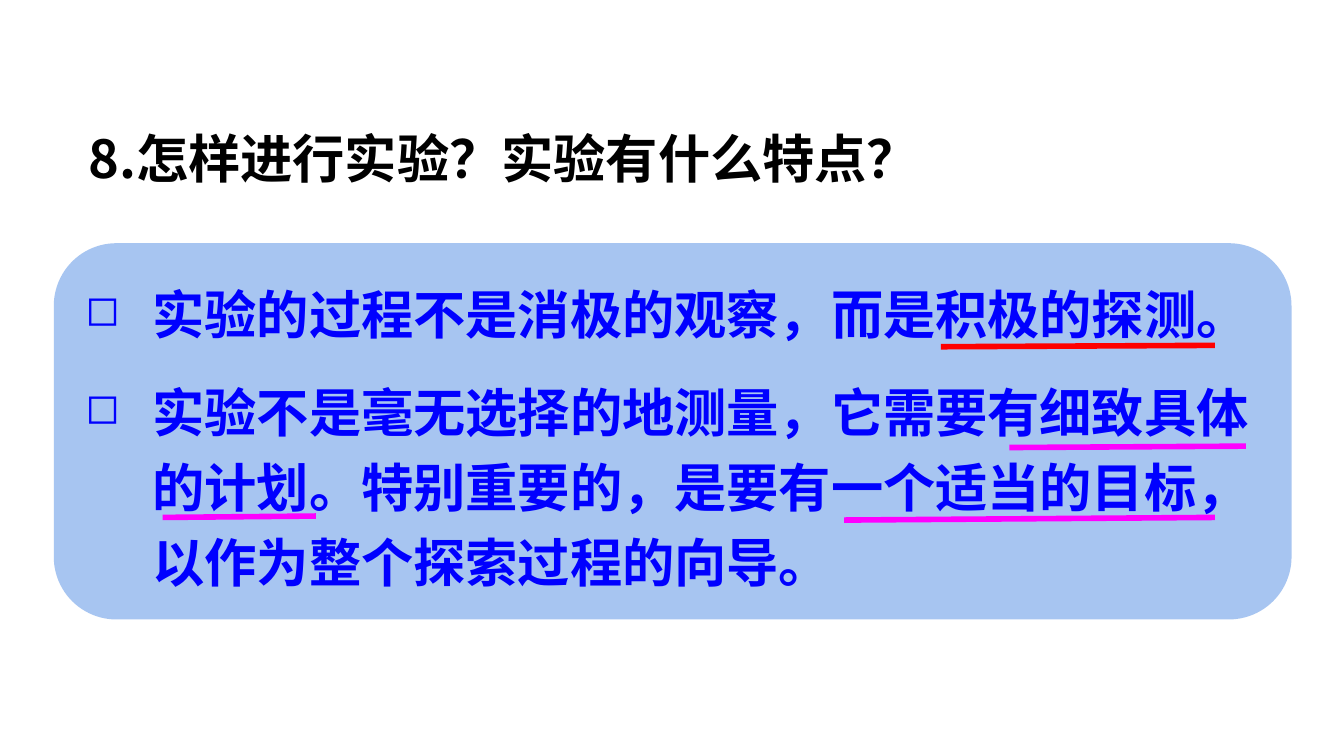
from dataclasses import dataclass

from lxml.etree import SubElement
from pptx import Presentation
from pptx.dml.color import RGBColor
from pptx.enum.shapes import MSO_CONNECTOR, MSO_SHAPE
from pptx.enum.text import MSO_ANCHOR, MSO_AUTO_SIZE, PP_ALIGN
from pptx.oxml.ns import qn
from pptx.util import Inches, Pt

SLIDE_WIDTH = 10
SLIDE_HEIGHT = SLIDE_WIDTH * 9 / 16
FONT = "Noto Sans CJK SC"
OPACITY = 55
BULLET = "◻"
BULLET_SIZE = 80
PARAGRAPH_FORMAT = {"alignment": PP_ALIGN.LEFT, "line_spacing": 1.2, "space_before": Pt(12)}
FONT_FORMAT = {"name": FONT, "size": Pt(28), "bold": True}
FRAME_FORMAT = {
    "word_wrap": True,
    "auto_size": MSO_AUTO_SIZE.NONE,
    "vertical_anchor": MSO_ANCHOR.MIDDLE,
}


@dataclass
class Panel:
    preset: MSO_SHAPE
    left: float
    top: float
    width: float
    height: float
    fill: str
    text_color: str
    paragraphs: list[str]
    bulleted: bool = False


@dataclass
class Underline:
    start: tuple[float, float]
    end: tuple[float, float]
    color: str = "FF00FF"


PANELS = [
    Panel(MSO_SHAPE.RECTANGLE, 0.56, 0.8, 6.54, 0.66, "FFFFFF", "000000",
          ["8.怎样进行实验？实验有什么特点？"]),
    Panel(MSO_SHAPE.ROUNDED_RECTANGLE, 0.4, 1.81, 9.21, 2.8, "6096E6", "0000FF",
          ["实验的过程不是消极的观察，而是积极的探测。",
           "实验不是毫无选择的地测量，它需要有细致具体的计划。"
           "特别重要的，是要有一个适当的目标，以作为整个探索过程的向导。"],
          bulleted=True),
]

UNDERLINES = [
    Underline((7, 2.58), (9.04, 2.57), "FF0000"),
    Underline((7.51, 3.33), (9.27, 3.32)),
    Underline((1.21, 3.85), (2.35, 3.84)),
    Underline((6.28, 3.87), (9.04, 3.85)),
]


def set_color(color_format, value: str) -> None:
    color_format.rgb = RGBColor.from_string(value)


def apply_format(target, values: dict) -> None:
    for name, value in values.items():
        setattr(target, name, value)


def add_bullet(paragraph) -> None:
    properties = paragraph._p.get_or_add_pPr()
    properties.set("marL", str(Inches(0.5)))
    properties.set("indent", str(Inches(-0.5)))
    SubElement(properties, qn("a:buSzPct")).set("val", str(BULLET_SIZE * 1000))
    SubElement(properties, qn("a:buChar")).set("char", BULLET)


def write_paragraph(paragraph, text: str, color: str, bulleted: bool) -> None:
    apply_format(paragraph, PARAGRAPH_FORMAT)
    if bulleted:
        add_bullet(paragraph)
    run = paragraph.add_run()
    run.text = text
    apply_format(run.font, FONT_FORMAT)
    set_color(run.font.color, color)
    # East Asian characters take their own typeface
    SubElement(run._r.get_or_add_rPr(), qn("a:ea")).set("typeface", FONT)


def draw_panel(slide, panel: Panel) -> None:
    shape = slide.shapes.add_shape(
        panel.preset, Inches(panel.left), Inches(panel.top),
        Inches(panel.width), Inches(panel.height))
    shape.shadow.inherit = False
    shape.line.fill.background()
    shape.fill.solid()
    set_color(shape.fill.fore_color, panel.fill)
    color = shape._element.spPr.find(qn("a:solidFill"))[0]
    SubElement(color, qn("a:alpha")).set("val", str(OPACITY * 1000))
    frame = shape.text_frame
    apply_format(frame, FRAME_FORMAT)
    for index, text in enumerate(panel.paragraphs):
        paragraph = frame.add_paragraph() if index else frame.paragraphs[0]
        write_paragraph(paragraph, text, panel.text_color, panel.bulleted)


def draw_underline(slide, underline: Underline) -> None:
    points = [Inches(value) for value in underline.start + underline.end]
    connector = slide.shapes.add_connector(MSO_CONNECTOR.STRAIGHT, *points)
    connector.line.width = Pt(3)
    set_color(connector.line.color, underline.color)
    SubElement(connector._element.spPr, qn("a:effectLst"))


def main() -> None:
    presentation = Presentation()
    presentation.slide_width = Inches(SLIDE_WIDTH)
    presentation.slide_height = Inches(SLIDE_HEIGHT)
    slide = presentation.slides.add_slide(presentation.slide_layouts[6])

    # Question and answer panels
    for panel in PANELS:
        draw_panel(slide, panel)

    # Underlined key phrases
    for underline in UNDERLINES:
        draw_underline(slide, underline)

    presentation.save("out.pptx")


if __name__ == "__main__":
    main()
